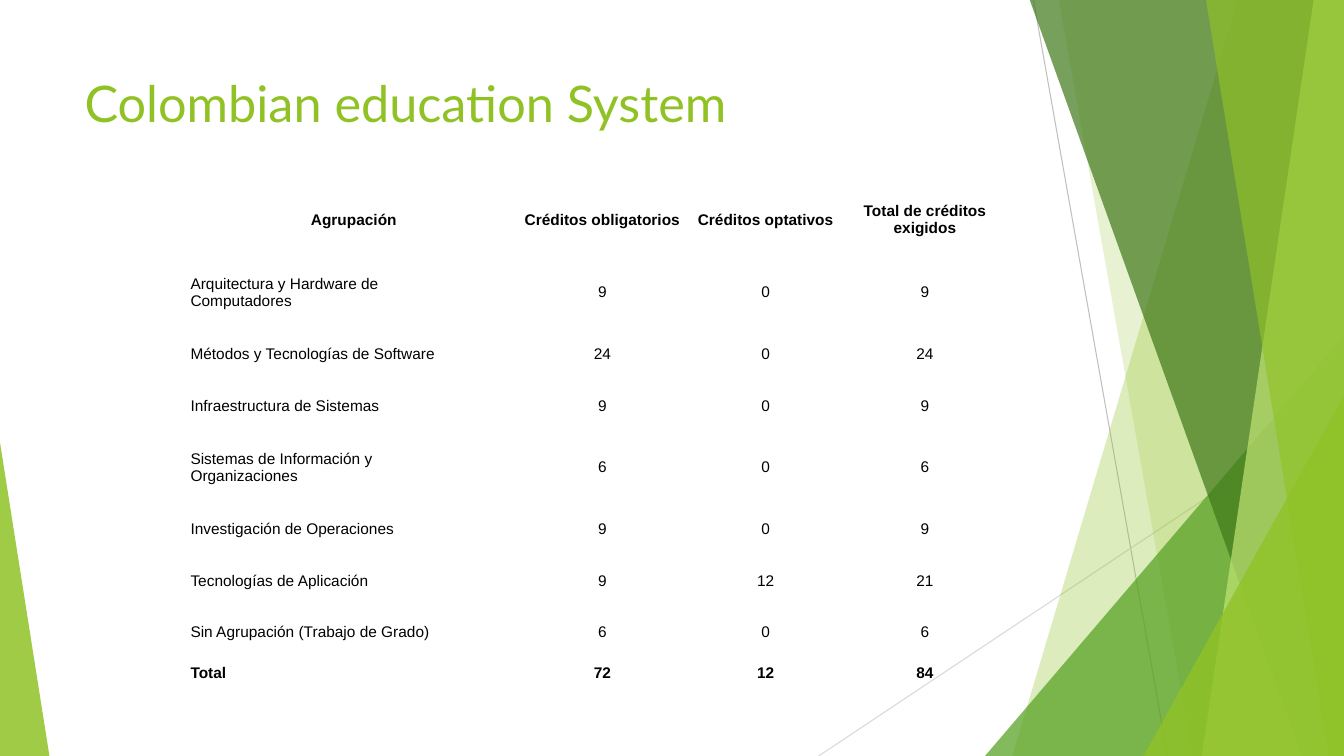
from pptx import Presentation
from pptx.dml.color import RGBColor as Rgb
from pptx.enum.shapes import MSO_CONNECTOR as Conn, MSO_SHAPE as Kind
from pptx.enum.text import MSO_ANCHOR as Anchor, PP_ALIGN as Align
from pptx.oxml.ns import qn
from pptx.util import Inches, Pt
from lxml.etree import SubElement

WIDE, HIGH, TOP = 13.33, 7.5, -0.01
COLORS = {
    "lime": "90C226", "green": "54A021", "forest": "3F7819", "pale": "C0E474",
    "gray": "BFBFBF", "mist": "D9D9D9", "black": "000000",
}
NO_GRID = "{2D5ABB26-0587-4C30-8999-92F81FD0307C}"


class Deck:
    def __init__(self):
        self.prs = Presentation()
        self.prs.slide_width = Inches(WIDE)
        self.prs.slide_height = Inches(HIGH)
        self.slide = self.prs.slides.add_slide(self.prs.slide_layouts[6])
        self.shapes = self.slide.shapes

    def line(self, start, end, color):
        ends = [Inches(v) for v in (*start, *end)]
        line = self.shapes.add_connector(Conn.STRAIGHT, *ends)
        line.line.color.rgb = Rgb.from_string(COLORS[color])
        line.line.width = Pt(0.75)
        SubElement(line.element.spPr, qn("a:effectLst"))

    def paint(self, shape, color, alpha):
        shape.shadow.inherit = False
        shape.line.fill.background()
        shape.fill.solid()
        shape.fill.fore_color.rgb = Rgb.from_string(COLORS[color])
        tint = next(shape.element.spPr.iter(qn("a:srgbClr")))
        SubElement(tint, qn("a:alpha")).set("val", str(alpha * 1000))

    def band(self, upper, lower, color, alpha):
        """Band from a slanted left edge to the right side of the slide."""
        pen = self.shapes.build_freeform(Inches(upper), Inches(TOP), 1.0)
        rest = [(WIDE, TOP), (WIDE, HIGH), (lower, HIGH)]
        pen.add_line_segments([(Inches(x), Inches(y)) for x, y in rest])
        self.paint(pen.convert_to_shape(), color, alpha)

    def wedge(self, left, top, width, apex, color, alpha):
        """Triangle standing on the bottom of the slide."""
        box = [Inches(v) for v in (left, top, width, HIGH - top)]
        shape = self.shapes.add_shape(Kind.ISOSCELES_TRIANGLE, *box)
        shape.adjustments[0] = apex
        self.paint(shape, color, alpha)

    def style(self, frame, font, size, color, bold=False, align=Align.LEFT):
        for para in frame.paragraphs:
            para.alignment = align
            for run in para.runs:
                run.font.name, run.font.size = font, Pt(size)
                run.font.bold = bold
                run.font.color.rgb = Rgb.from_string(COLORS[color])

    def title(self, text, *box):
        frame = self.shapes.add_textbox(*[Inches(v) for v in box]).text_frame
        frame.word_wrap = True
        frame.text = text
        self.style(frame, "Lato", 36, "lime")

    def table(self, rows, left, top, widths, heights):
        box = [Inches(v) for v in (left, top, sum(widths), sum(heights))]
        frame = self.shapes.add_table(len(rows), len(widths), *box)
        next(frame.element.iter(qn("a:tableStyleId"))).text = NO_GRID
        table = frame.table
        table.first_row = table.horz_banding = False
        for col, width in zip(table.columns, widths):
            col.width = Inches(width)
        for row, height in zip(table.rows, heights):
            row.height = Inches(height)
        for r, row in enumerate(rows):
            for c, value in enumerate(row):
                cell = table.cell(r, c)
                cell.fill.background()
                cell.vertical_anchor = Anchor.MIDDLE
                cell.margin_left = cell.margin_top = cell.margin_bottom = Inches(0.04)
                cell.margin_right = Inches(0.03)
                cell.text_frame.text = str(value)
                edge = r in (0, len(rows) - 1)
                align = Align.CENTER if r == 0 or c > 0 else Align.LEFT
                self.style(cell.text_frame, "Arial", 11, "black", edge, align)


def main():
    deck = Deck()

    # Green facets
    deck.line((10.25, 0), (11.58, HIGH), "gray")
    deck.line((WIDE, 4.03), (8.12, HIGH), "mist")
    deck.band(12.28, 10.04, "lime", 30)
    deck.band(10.5, 11.83, "lime", 20)
    deck.wedge(9.77, 3.33, 3.56, 1, "green", 72)
    deck.band(10.21, 12.91, "forest", 70)
    deck.band(13.03, 11.92, "pale", 70)
    deck.band(11.96, 13.18, "lime", 65)
    deck.wedge(11.34, 3.93, 1.99, 1, "lime", 80)
    deck.wedge(0, 4.39, 0.49, 0, "lime", 85)

    # Title
    deck.title("Colombian education System", 0.74, 0.67, 9.4, 1.44)

    # Credits table
    head = ["Agrupación", "Créditos obligatorios", "Créditos optativos",
            "Total de créditos exigidos"]
    groups = [
        ("Arquitectura y Hardware de\nComputadores", 9, 0),
        ("Métodos y Tecnologías de Software", 24, 0),
        ("Infraestructura de Sistemas", 9, 0),
        ("Sistemas de Información y\nOrganizaciones", 6, 0),
        ("Investigación de Operaciones", 9, 0),
        ("Tecnologías de Aplicación", 9, 12),
        ("Sin Agrupación (Trabajo de Grado)", 6, 0),
    ]
    must = sum(group[1] for group in groups)
    free = sum(group[2] for group in groups)
    body = [(name, a, b, a + b) for name, a, b in groups + [("Total", must, free)]]
    tall = [0.72 if "\n" in group[0] else 0.51 for group in groups]
    deck.table([head] + body, 1.85, 1.82, [3.31, 1.62, 1.62, 1.54],
               [0.72] + tall + [0.29])

    deck.prs.save("out.pptx")


if __name__ == "__main__":
    main()
